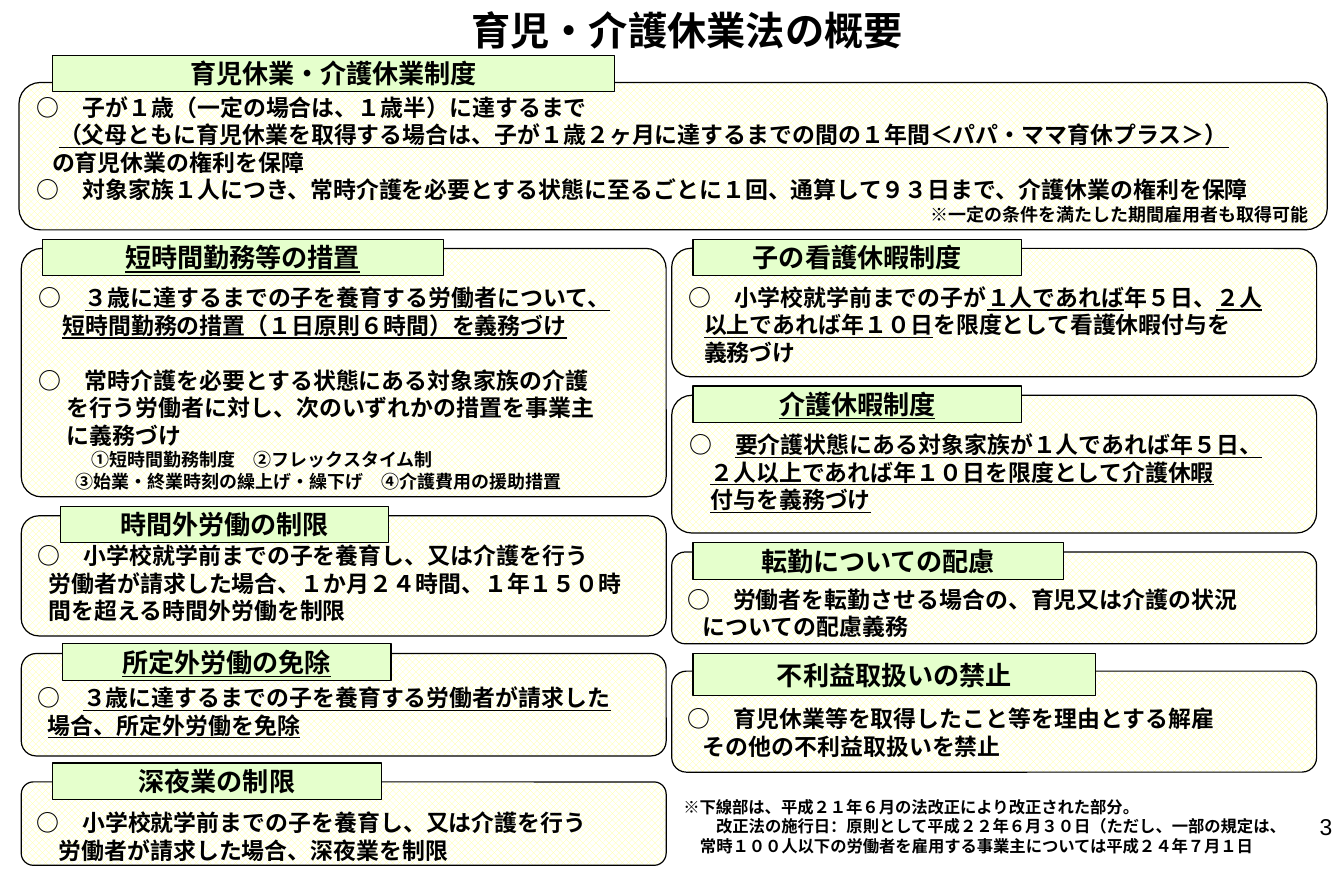
"""Build a one-slide overview of the Child Care and Family Care Leave Act."""
from pptx import Presentation
from pptx.dml.color import RGBColor
from pptx.enum.dml import MSO_PATTERN
from pptx.enum.shapes import MSO_SHAPE
from pptx.enum.text import MSO_ANCHOR, PP_ALIGN
from pptx.util import Cm, Pt

BLACK = RGBColor(0x00, 0x00, 0x00)
WHITE = RGBColor(0xFF, 0xFF, 0xFF)
YELLOW = RGBColor(0xFF, 0xFF, 0x99)
GREEN = RGBColor(0xE5, 0xFF, 0xCC)
ROUNDED, RECTANGLE = MSO_SHAPE.ROUNDED_RECTANGLE, MSO_SHAPE.RECTANGLE
DIAMONDS = MSO_PATTERN.OUTLINED_DIAMOND
TOP, MIDDLE = MSO_ANCHOR.TOP, MSO_ANCHOR.MIDDLE
LEFT, CENTER, RIGHT = PP_ALIGN.LEFT, PP_ALIGN.CENTER, PP_ALIGN.RIGHT
TITLE_ONLY = 5
COLUMN_WIDTH = 13.92
LEFT_COLUMN, RIGHT_COLUMN = 0.46, 14.5
SMALL = {"size": 11}
NOTE = {"size": 10}


def write_lines(frame, lines, **frame_format):
    """Fill a frame with (indent, text, options); text between underscores is underlined."""
    frame_values = {"word_wrap": True, "vertical_anchor": TOP, "margin_bottom": 0}
    for name, value in (frame_values | frame_format).items():
        setattr(frame, name, value)
    for index, (indent, text, options) in enumerate(lines):
        para = frame.paragraphs[0] if index == 0 else frame.add_paragraph()
        para.alignment = options.get("align", LEFT)
        para.space_before = Pt(options.get("before", 0))
        margins = para._p.get_or_add_pPr()
        margins.set("marL", str(Cm(indent)))
        margins.set("indent", "0")
        font_values = {"name": "Arial", "size": Pt(options.get("size", 14)),
                       "bold": options.get("bold", True)}
        for position, part in enumerate(text.split("_")):
            if part:
                span = para.add_run()
                span.text = part
                span.font.color.rgb = BLACK
                for name, value in (font_values | {"underline": position % 2 == 1}).items():
                    setattr(span.font, name, value)


def add_box(kind, left, top, width, height):
    """Add an outlined shape without shadow."""
    box = page.shapes.add_shape(kind, Cm(left), Cm(top), Cm(width), Cm(height))
    box.shadow.inherit = False
    box.line.color.rgb = BLACK
    box.line.width = Pt(0.75)
    return box


deck = Presentation()
deck.slide_width, deck.slide_height = Cm(29.01), Cm(19.05)
page = deck.slides.add_slide(deck.slide_layouts[TITLE_ONLY])

title = page.shapes.title
title_place = {"left": 6.27, "top": 0, "width": 17.12, "height": 1.27}
for name, value in title_place.items():
    setattr(title, name, Cm(value))
write_lines(title.text_frame, [(0, "育児・介護休業法の概要", {"size": 24, "align": CENTER})],
            vertical_anchor=MIDDLE, margin_top=0)

panels = [
    {"place": (0.41, 1.78, 28.24, 3.18), "inset": 0.1,
     "heading": "育児休業・介護休業制度", "tab": (1.14, 1.19, 12.12, 0.79),
     "lines": [
         (0, "○　子が１歳（一定の場合は、１歳半）に達するまで", {}),
         (0.48, "_（父母ともに育児休業を取得する場合は、子が１歳２ヶ月に達するまでの間の１年間＜パパ・ママ育休プラス＞）_", {}),
         (0.33, "の育児休業の権利を保障", {}),
         (0, "○　対象家族１人につき、常時介護を必要とする状態に至るごとに１回、通算して９３日まで、介護休業の権利を保障", {}),
         (0, "※一定の条件を満たした期間雇用者も取得可能", SMALL | {"align": RIGHT})]},
    {"place": (LEFT_COLUMN, 5.36, COLUMN_WIDTH, 5.36), "inset": 0.64, "corner": 0.081,
     "heading": "_短時間勤務等の措置_", "tab": (0.91, 5.16, 8.66, 0.79),
     "lines": [
         (0, "○　_３歳に達するまでの子を養育する労働者について、_", {}),
         (0.51, "_短時間勤務の措置（１日原則６時間）を義務づけ_", {}),
         (0, "○　常時介護を必要とする状態にある対象家族の介護", {"before": 16.8}),
         (0.61, "を行う労働者に対し、次のいずれかの措置を事業主", {}),
         (0.61, "に義務づけ", {}),
         (1.14, "①短時間勤務制度　②フレックスタイム制", SMALL),
         (0.79, "③始業・終業時刻の繰上げ・繰下げ　④介護費用の援助措置", SMALL)]},
    {"place": (LEFT_COLUMN, 11.13, COLUMN_WIDTH, 2.59), "inset": 0.45,
     "heading": "時間外労働の制限", "tab": (1.3, 10.92, 7.09, 0.79),
     "lines": [
         (0, "○　小学校就学前までの子を養育し、又は介護を行う", {}),
         (0.23, "労働者が請求した場合、１か月２４時間、１年１５０時", {}),
         (0.23, "間を超える時間外労働を制限", {})]},
    {"place": (LEFT_COLUMN, 14.1, COLUMN_WIDTH, 2.21), "inset": 0.56,
     "heading": "_所定外労働の免除_", "tab": (1.35, 13.89, 7.09, 0.79),
     "lines": [
         (0, "○　_３歳に達するまでの子を養育する労働者が請求した_", {}),
         (0.23, "_場合、所定外労働を免除_", {})]},
    {"place": (LEFT_COLUMN, 16.87, COLUMN_WIDTH, 1.8), "inset": 0.51,
     "heading": "深夜業の制限", "tab": (1.14, 16.46, 7.09, 0.79),
     "lines": [
         (0, "○　小学校就学前までの子を養育し、又は介護を行う", {}),
         (0.48, "労働者が請求した場合、深夜業を制限", {})]},
    {"place": (RIGHT_COLUMN, 5.36, COLUMN_WIDTH, 2.77), "inset": 0.64,
     "heading": "子の看護休暇制度", "tab": (14.96, 5.16, 7.09, 0.79),
     "lines": [
         (0, "○　小学校就学前までの子が_１人であれば_年５日、_２人_", {}),
         (0.33, "_以上であれば年１０日_を限度として看護休暇付与を", {}),
         (0.33, "義務づけ", {})]},
    {"place": (RIGHT_COLUMN, 8.53, COLUMN_WIDTH, 2.97), "inset": 0.64,
     "heading": "_介護休暇制度_", "tab": (14.96, 8.33, 7.09, 0.79),
     "lines": [
         (0, "○　_要介護状態にある対象家族が１人であれば年５日、_", {}),
         (0.46, "_２人以上であれば年１０日を限度として介護休暇_", {}),
         (0.46, "_付与を義務づけ_", {})]},
    {"place": (RIGHT_COLUMN, 11.91, COLUMN_WIDTH, 1.98), "inset": 0.64,
     "heading": "転勤についての配慮", "tab": (14.96, 11.71, 8, 0.79),
     "lines": [
         (0, "○　労働者を転勤させる場合の、育児又は介護の状況", {}),
         (0.33, "についての配慮義務", {})]},
    {"place": (RIGHT_COLUMN, 14.48, COLUMN_WIDTH, 2.18), "inset": 0.64,
     "heading": "不利益取扱いの禁止", "tab": (14.96, 14.1, 8.69, 0.91),
     "lines": [
         (0, "○　育児休業等を取得したこと等を理由とする解雇", {}),
         (0.33, "その他の不利益取扱いを禁止", {})]},
]
for panel in panels:
    body = add_box(ROUNDED, *panel["place"])
    body.adjustments[0] = panel.get("corner", 0.145)
    body.fill.patterned()
    body.fill.pattern = DIAMONDS
    body.fill.fore_color.rgb = YELLOW
    body.fill.back_color.rgb = WHITE
    write_lines(body.text_frame, panel["lines"], margin_top=Cm(panel["inset"]))

    tab = add_box(RECTANGLE, *panel["tab"])
    tab.fill.solid()
    tab.fill.fore_color.rgb = GREEN
    write_lines(tab.text_frame, [(0, panel["heading"], {"size": 16, "align": CENTER})],
                word_wrap=False, vertical_anchor=MIDDLE, margin_top=0)

footnote = [
    (0, "※下線部は、平成２１年６月の法改正により改正された部分。", NOTE),
    (0.71, "改正法の施行日：原則として平成２２年６月３０日（ただし、一部の規定は、", NOTE),
    (0.36, "常時１００人以下の労働者を雇用する事業主については平成２４年７月１日", NOTE)]
page_number = [(0, "3", {"align": RIGHT, "bold": False})]
for place, lines in [((14.5, 17.07, 14.5, 1.52), footnote),
                     ((22.25, 17.4, 6.76, 1.32), page_number)]:
    note = page.shapes.add_textbox(*map(Cm, place))
    write_lines(note.text_frame, lines)

deck.save("out.pptx")
